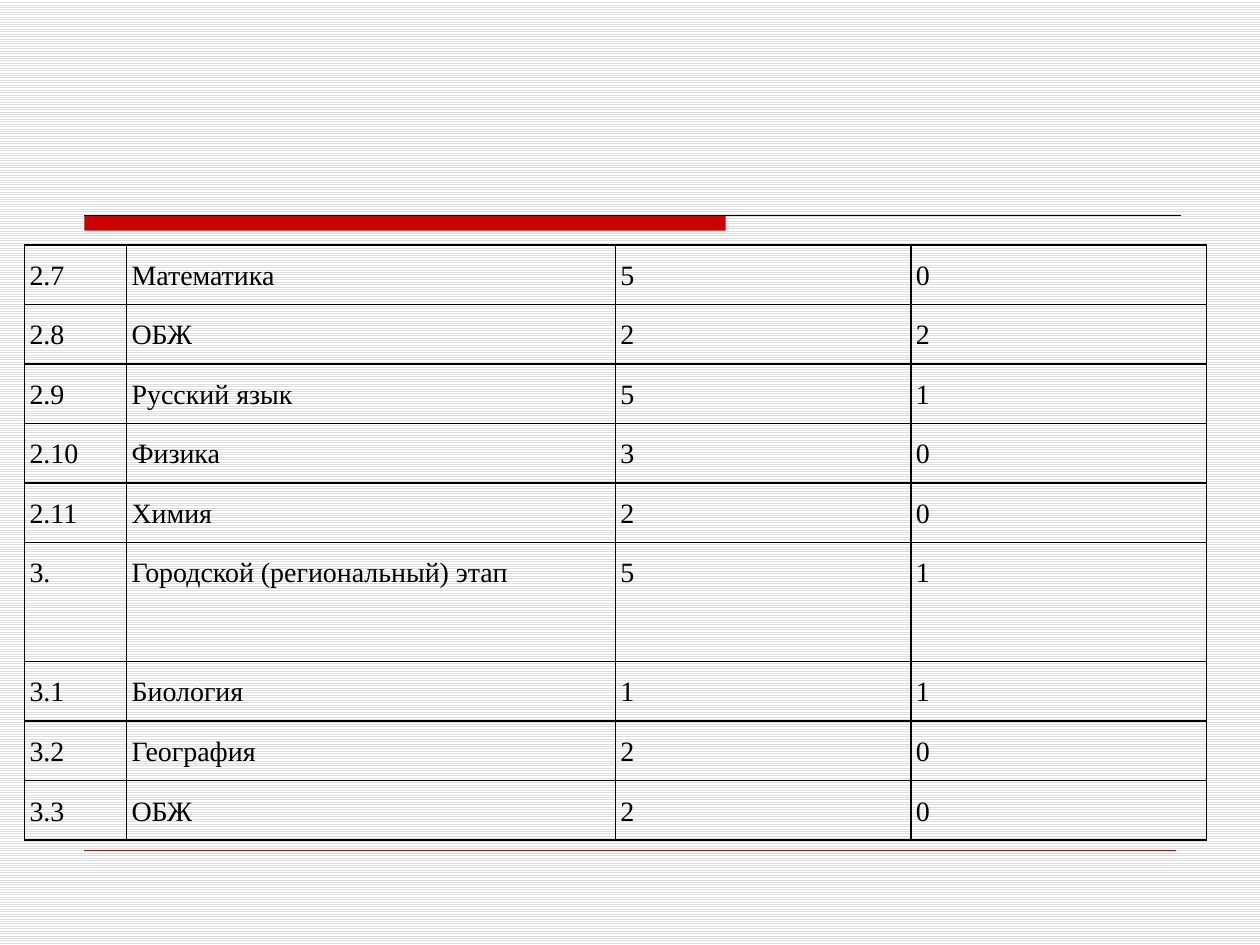
from lxml.etree import SubElement
from pptx import Presentation
from pptx.dml.color import RGBColor
from pptx.enum.dml import MSO_PATTERN
from pptx.enum.shapes import MSO_CONNECTOR, MSO_SHAPE
from pptx.enum.text import PP_ALIGN
from pptx.oxml.ns import qn
from pptx.util import Inches, Pt

COLORS = {"accent": "CC0000", "ink": "000000", "stripe": "DDDDDD", "paper": "FFFFFF"}

deck = Presentation()
deck.slide_width, deck.slide_height = Inches(10), Inches(7.5)
slide = deck.slides.add_slide(deck.slide_layouts[6])


def color(name):
    return RGBColor.from_string(COLORS[name])


def place(x, y):
    return int(deck.slide_width * x), int(deck.slide_height * y)


backdrop = slide.background.fill
backdrop.patterned()
backdrop.pattern = MSO_PATTERN.LIGHT_HORIZONTAL
backdrop.fore_color.rgb = color("stripe")
backdrop.back_color.rgb = color("paper")

left_margin, title_rule_y, footer_rule_y = 0.067, 0.228, 0.9

title_bar = slide.shapes.add_shape(
    MSO_SHAPE.RECTANGLE, *place(left_margin, title_rule_y), *place(0.509, 0.016))
title_bar.shadow.inherit = False
title_bar.fill.solid()
title_bar.fill.fore_color.rgb = color("accent")
title_bar.line.fill.background()

rules = [(title_rule_y, 0.937, "ink", 0.75), (footer_rule_y, 0.933, "accent", 0.25)]
for y, right, ink, weight in rules:
    rule = slide.shapes.add_connector(
        MSO_CONNECTOR.STRAIGHT, *place(left_margin, y), *place(right, y))
    rule.line.color.rgb = color(ink)
    rule.line.width = Pt(weight)
    SubElement(rule._element.spPr, qn("a:effectLst"))

results = [
    ("2.7", "Математика", "5", "0"),
    ("2.8", "ОБЖ", "2", "2"),
    ("2.9", "Русский язык", "5", "1"),
    ("2.10", "Физика", "3", "0"),
    ("2.11", "Химия", "2", "0"),
    ("3.", "Городской (региональный) этап", "5", "1"),
    ("3.1", "Биология", "1", "1"),
    ("3.2", "География", "2", "0"),
    ("3.3", "ОБЖ", "2", "0"),
]
column_shares = [0.081, 0.388, 0.2345, 0.2345]
row_share = 0.063
row_spans = [2 if number == "3." else 1 for number, *_ in results]

olympiad = slide.shapes.add_table(
    len(results), len(column_shares), *place(0.0195, 0.259),
    *place(sum(column_shares), row_share * sum(row_spans))).table
olympiad.first_row = olympiad.horz_banding = False

for column, share in zip(olympiad.columns, column_shares):
    column.width = int(deck.slide_width * share)
for row, span in zip(olympiad.rows, row_spans):
    row.height = int(deck.slide_height * row_share * span)

cell_format = {"margin_left": Inches(0.04), "margin_right": Inches(0.04),
               "margin_top": 0, "margin_bottom": 0}
paragraph_format = {"alignment": PP_ALIGN.JUSTIFY, "line_spacing": 1.5}
font_format = {"name": "Times New Roman", "size": Pt(16)}

for row, values in zip(olympiad.rows, results):
    for cell, value in zip(row.cells, values):
        cell.text = value
        paragraph = cell.text_frame.paragraphs[0]
        font = paragraph.runs[0].font
        formats = [(cell, cell_format), (paragraph, paragraph_format), (font, font_format)]
        for target, settings in formats:
            for attribute, setting in settings.items():
                setattr(target, attribute, setting)
        font.color.rgb = color("ink")
        properties = cell._tc.get_or_add_tcPr()
        for side in ("lnL", "lnR", "lnT", "lnB"):
            border = SubElement(properties, qn(f"a:{side}"), w=str(Pt(1)))
            stroke = SubElement(border, qn("a:solidFill"))
            SubElement(stroke, qn("a:srgbClr"), val=COLORS["ink"])
        cell.fill.background()

deck.save("out.pptx")
